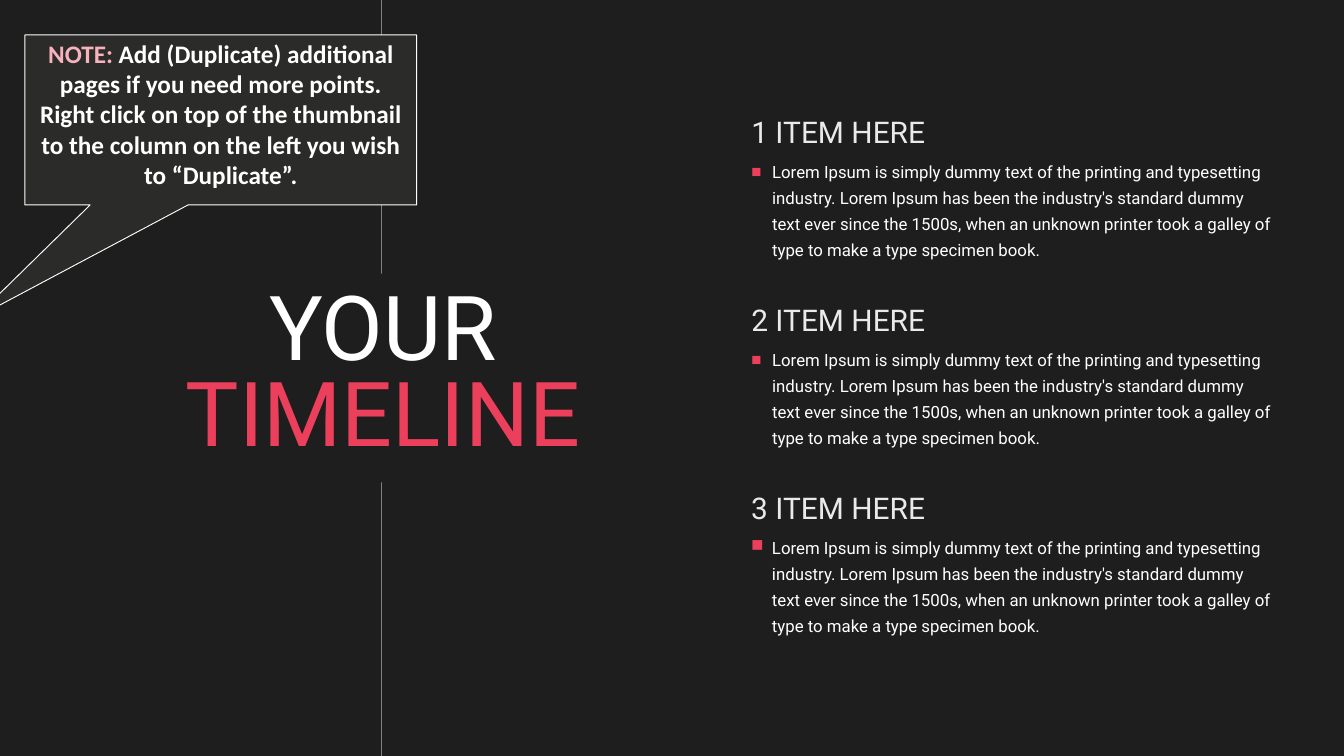
from lxml import etree
from pptx import Presentation, util as u
from pptx.dml.color import RGBColor
from pptx.enum import shapes, text
from pptx.oxml.ns import qn

CHARCOAL = RGBColor(0x1E, 0x1E, 0x1E)
SLATE = RGBColor(0x2B, 0x2C, 0x29)
GREY = RGBColor(0x80, 0x80, 0x80)
WHITE = RGBColor(0xFF, 0xFF, 0xFF)
SILVER = RGBColor(0xEA, 0xEA, 0xEA)
RED = RGBColor(0xEB, 0x3F, 0x5C)
PINK = RGBColor(0xF7, 0xB2, 0xBE)

# The grid has 20 columns and 11.25 rows of one inch each
COLUMNS, ROWS = 20, 11.25
ITEM_PITCH = 2.8
HEADING_ROWS, BODY_ROWS, BODY_OFFSET = 0.59, 1.82, 0.57

HEADLINE_FONT = {"name": "Roboto", "size": u.Pt(96), "bold": False}
HEADING_FONT = {"name": "Roboto", "size": u.Pt(32), "bold": False}
BODY_FONT = {"name": "Roboto", "size": u.Pt(18), "bold": False}
NOTE_FONT = {"name": "Calibri", "size": u.Pt(27), "bold": True}

LOREM = ("Lorem Ipsum is simply dummy text of the printing and typesetting industry. "
         "Lorem Ipsum has been the industry's standard dummy text ever since the 1500s, "
         "when an unknown printer took a galley of type to make a type specimen book.")
ITEMS = [(f"{number} ITEM HERE", LOREM) for number in (1, 2, 3)]


def apply(target, formats):
    for name, value in formats.items():
        setattr(target, name, value)


def place(shape, box):
    apply(shape, dict(zip(("left", "top", "width", "height"), map(u.Inches, box))))


def write(shape, runs, font, anchor, align, spacing=1.0, before=0):
    """Fill the shape with one paragraph of (words, colour) runs."""
    frame = shape.text_frame
    apply(frame, {"word_wrap": True, "auto_size": text.MSO_AUTO_SIZE.NONE,
                  "vertical_anchor": anchor})
    paragraph = frame.paragraphs[0]
    apply(paragraph, {"alignment": align, "line_spacing": spacing,
                      "space_before": u.Pt(before)})
    for words, colour in runs:
        if paragraph.runs and font is HEADLINE_FONT:
            paragraph.add_line_break()
        run = paragraph.add_run()
        run.text = words
        apply(run.font, font)
        run.font.color.rgb = colour
    return paragraph


def set_bullet(paragraph, indent, character=None):
    properties = paragraph._p.get_or_add_pPr()
    properties.set("marL", str(u.Inches(indent)))
    properties.set("indent", str(-u.Inches(indent)))
    if character is None:
        etree.SubElement(properties, qn("a:buNone"))
        return
    colour = etree.SubElement(properties, qn("a:buClr"))
    etree.SubElement(colour, qn("a:srgbClr"), val=str(RED))
    etree.SubElement(properties, qn("a:buChar"), char=character)


def add_timeline_axis(slide, column):
    axis = slide.shapes.add_connector(
        shapes.MSO_CONNECTOR.STRAIGHT,
        u.Inches(column), 0, u.Inches(column), u.Inches(ROWS))
    axis.line.color.rgb = GREY
    axis.line.width = u.Pt(1)
    etree.SubElement(axis._element.spPr, qn("a:effectLst"))
    slide.shapes._spTree.insert(2, axis._element)  # behind the headline


def add_headline(slide, box):
    headline = slide.shapes.title
    place(headline, box)
    headline.fill.solid()
    headline.fill.fore_color.rgb = CHARCOAL
    write(headline, [("YOUR", WHITE), ("TIMELINE", RED)], HEADLINE_FONT,
          text.MSO_ANCHOR.MIDDLE, text.PP_ALIGN.CENTER, 0.8)


def add_items(slide, left, top, width):
    """Stack the items; those beyond the layout's placeholders get text boxes."""
    slots = list(slide.placeholders)[1:]
    while len(slots) < 2 * len(ITEMS):
        slots.append(slide.shapes.add_textbox(0, 0, 0, 0))
    for index, (title, details) in enumerate(ITEMS):
        heading, body = slots[2 * index:2 * index + 2]
        row = top + index * ITEM_PITCH
        place(heading, (left, row, width, HEADING_ROWS))
        place(body, (left, row + BODY_OFFSET, width, BODY_ROWS))
        set_bullet(write(heading, [(title, SILVER)], HEADING_FONT,
                         text.MSO_ANCHOR.BOTTOM, text.PP_ALIGN.LEFT, 0.9), 0)
        set_bullet(write(body, [(details, WHITE)], BODY_FONT,
                         text.MSO_ANCHOR.TOP, text.PP_ALIGN.LEFT, 1.3, 12), 0.31, "■")


def add_note(slide, box):
    note = slide.shapes.add_shape(
        shapes.MSO_SHAPE.RECTANGULAR_CALLOUT, *map(u.Inches, box))
    note.adjustments[0], note.adjustments[1] = -0.63, 1.17
    note.shadow.inherit = False
    note.fill.solid()
    note.fill.fore_color.rgb = SLATE
    note.line.color.rgb = WHITE
    note.line.width = u.Pt(1)
    advice = ("Add (Duplicate) additional pages if you need more points. Right click on top "
              "of the thumbnail to the column on the left you wish to “Duplicate”.")
    write(note, [("NOTE: ", PINK), (advice, WHITE)], NOTE_FONT,
          text.MSO_ANCHOR.TOP, text.PP_ALIGN.CENTER)


def main():
    deck = Presentation()
    deck.slide_width, deck.slide_height = u.Inches(COLUMNS), u.Inches(ROWS)
    slide = deck.slides.add_slide(deck.slide_layouts.get_by_name("Comparison"))
    slide.background.fill.solid()
    slide.background.fill.fore_color.rgb = CHARCOAL
    add_timeline_axis(slide, 5.68)
    add_headline(slide, (0.59, 4.07, 10.22, 3.11))
    add_items(slide, 11.08, 1.69, 7.94)
    add_note(slide, (0.37, 0.52, 5.83, 2.53))
    deck.save("out.pptx")


if __name__ == "__main__":
    main()
